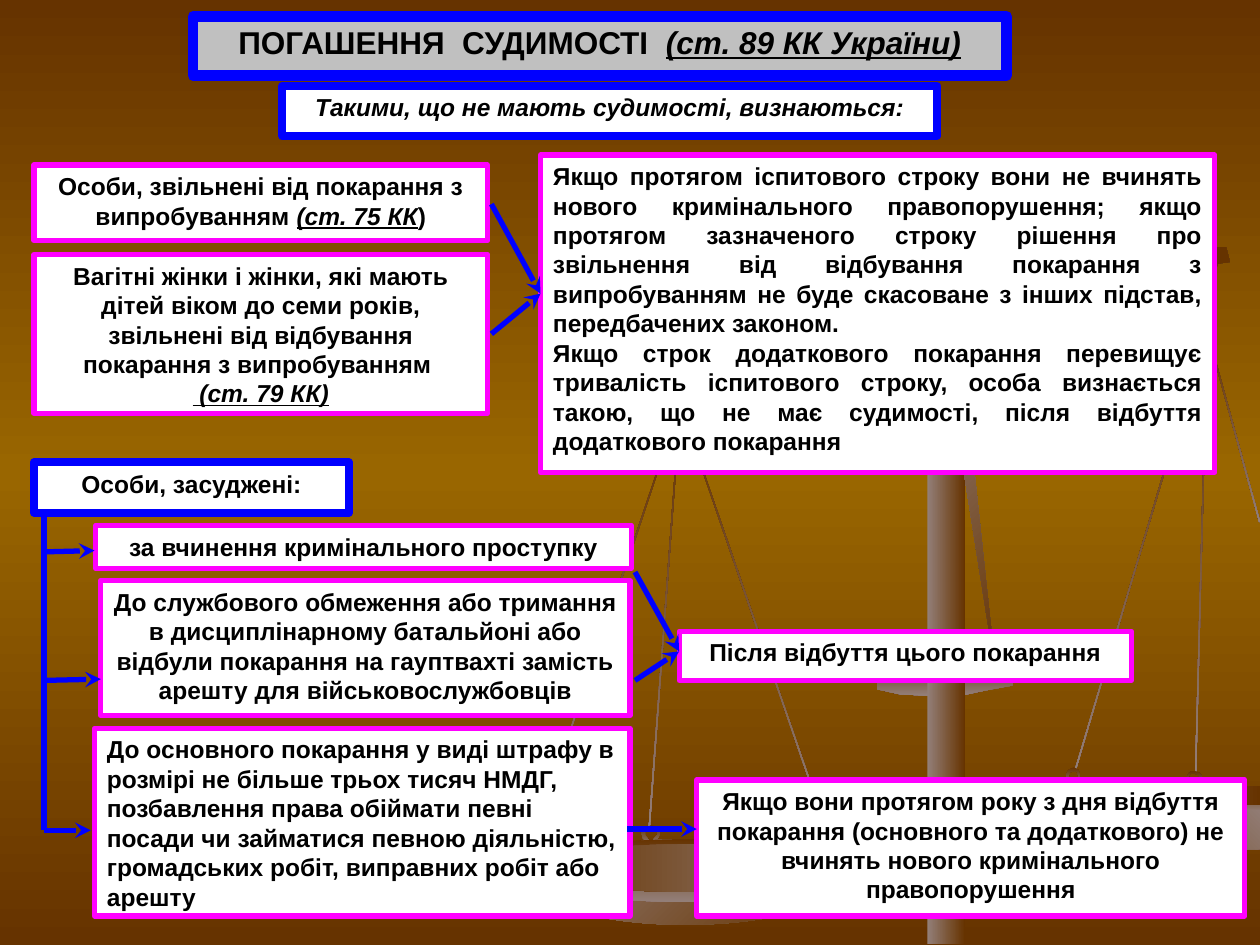
"""Builds a slide on the expiry of a criminal record, over a drawing of scales."""
from copy import deepcopy

from lxml import etree
from pptx import Presentation
from pptx import util as u
from pptx.dml import color
from pptx.enum import shapes, text
from pptx.oxml import ns

COLORS = {"dark": "663300", "gold": "996600", "pale": "937F79", "blue": "0000FF",
          "pink": "FF00FF", "gray": "C0C0C0", "white": "FFFFFF", "black": "000000"}
UNITS_PER_INCH = 100
RISING = ("dark", "pale")
FALLING = ("pale", "dark")
CENTER, JUSTIFY, LEFT = (text.PP_ALIGN.CENTER, text.PP_ALIGN.JUSTIFY, text.PP_ALIGN.LEFT)


def rgb(name):
    return color.RGBColor.from_string(COLORS[name])


class Deck:
    """Holds the style and the current slide."""

    def __init__(self):
        self.presentation = Presentation()
        self.presentation.slide_width = u.Inches(10)
        self.presentation.slide_height = u.Inches(7.5)
        self.slide = self.presentation.slides.add_slide(self.presentation.slide_layouts[5])
        self.font = "Arial"

    def gradient(self, fill, ends, clockwise):
        fill.gradient()
        fill.gradient_angle = (360 - clockwise) % 360
        for stop, name in zip(fill.gradient_stops, ends):
            stop.color.rgb = rgb(name)

    def background(self, edge, middle):
        self.gradient(self.slide.background.fill, (edge, middle), 90)
        stops = next(self.slide.element.iter(ns.qn("a:gsLst")))
        stops[1].set("pos", "50000")
        last = deepcopy(stops[0])
        last.set("pos", "100000")
        stops.append(last)

    def shade(self, part, ends, clockwise):
        part.shadow.inherit = False
        part.line.fill.background()
        self.gradient(part.fill, ends, clockwise)

    def solid(self, kind, place, ends, clockwise, rotation=0):
        part = self.slide.shapes.add_shape(kind, *map(u.Inches, place))
        part.rotation = rotation
        self.shade(part, ends, clockwise)

    def outline(self, contours, ends, clockwise, close=True):
        builder = None
        for start, *rest in contours:
            if builder is None:
                builder = self.slide.shapes.build_freeform(
                    *start, scale=u.Inches(1) / UNITS_PER_INCH)
            else:
                builder.move_to(*start)
            builder.add_line_segments(rest, close=close)
        self.shade(builder.convert_to_shape(), ends, clockwise)

    def fill_text(self, box, paragraphs, align, size, italic):
        frame = box.text_frame
        frame.word_wrap = True
        frame.auto_size = text.MSO_AUTO_SIZE.NONE
        frame.vertical_anchor = text.MSO_ANCHOR.TOP
        for number, parts in enumerate(paragraphs):
            paragraph = frame.add_paragraph() if number else frame.paragraphs[0]
            paragraph.alignment = align
            font = paragraph.font
            font.name, font.size, font.bold, font.italic = self.font, u.Pt(size), True, italic
            font.color.rgb = rgb("black")
            for position, wording in enumerate([parts] if isinstance(parts, str) else parts):
                if wording:
                    run = paragraph.add_run()
                    run.text = wording
                    if position % 2:
                        run.font.italic = run.font.underline = True

    def frame(self, box, fill, border, width):
        box.fill.solid()
        box.fill.fore_color.rgb = rgb(fill)
        box.line.color.rgb = rgb(border)
        box.line.width = u.Pt(width)

    def title(self, place, *paragraphs):
        box = self.slide.shapes.title
        box.left, box.top, box.width, box.height = map(u.Inches, place)
        self.frame(box, "gray", "blue", 6)
        self.fill_text(box, paragraphs, CENTER, 18, False)

    def box(self, place, *paragraphs, border="pink", width=3, align=CENTER, italic=False):
        box = self.slide.shapes.add_shape(shapes.MSO_SHAPE.RECTANGLE, *map(u.Inches, place))
        box.shadow.inherit = False
        self.frame(box, "white", border, width)
        self.fill_text(box, paragraphs, align, 14, italic)

    def heading(self, place, wording, italic=False):
        self.box(place, wording, border="blue", width=4.5, italic=italic)

    def line(self, start, end, arrow=True):
        line = self.slide.shapes.add_connector(
            shapes.MSO_CONNECTOR.STRAIGHT, *map(u.Inches, start + end))
        line.line.color.rgb = rgb("blue")
        line.line.width = u.Pt(3)
        properties = line.element.spPr
        if arrow:
            etree.SubElement(properties.find(ns.qn("a:ln")), ns.qn("a:tailEnd"), type="stealth")
        etree.SubElement(properties, ns.qn("a:effectLst"))

    def scales(self):
        rectangle, oval = shapes.MSO_SHAPE.RECTANGLE, shapes.MSO_SHAPE.OVAL
        for left, top, height, rotation in CORDS:
            self.solid(rectangle, (left, top, 0.01, height), RISING, 90, rotation)
        for contours, ends, clockwise in CASTINGS:
            self.outline(contours, ends, clockwise)
        self.solid(oval, (4.24, 6.66, 2.4, 0.68), FALLING, 45)
        self.solid(oval, (4.16, 6.66, 2.61, 0.5), RISING, 90)
        self.solid(oval, (4.24, 6.7, 2.47, 0.38), RISING, 0)
        self.solid(rectangle, (7.36, 3.08, 0.3, 4.41), FALLING, 0)
        self.outline([POINTER], FALLING, 45, close=False)


CORDS = [(9.04, 2.6, 3.6, 16.6), (9.53, 2.66, 3.47, 1.5), (9.79, 2.64, 1.53, 344.6),
         (5.98, 3.15, 3.53, 341), (4.79, 3.16, 3.68, 18.6), (5.27, 3.25, 3.31, 4.2)]
POINTER = [(791, 539), (750, 280), (750, 276), (748, 268), (760, 265), (761, 274), (763, 277)]
RINGS = [
    [[(849, 626), (853, 623), (856, 619), (857, 615), (856, 611), (852, 609), (848, 611),
      (846, 615), (846, 619), (848, 624)],
     [(853, 612), (855, 613), (856, 617), (855, 618), (850, 623), (848, 617), (849, 613)]],
    [[(958, 251), (962, 248), (965, 244), (965, 239), (962, 235), (958, 234), (955, 235),
      (952, 239), (951, 241), (953, 246)],
     [(959, 236), (962, 237), (963, 241), (962, 244), (958, 249), (954, 244), (954, 239)]],
    [[(951, 264), (955, 268), (960, 268), (964, 265), (965, 260), (964, 255), (959, 249),
      (954, 253), (950, 260)],
     [(953, 260), (956, 254), (958, 251), (963, 256), (964, 260), (961, 264), (957, 265),
      (954, 263)]],
    [[(948, 629), (952, 624), (954, 620), (954, 616), (952, 613), (948, 612), (945, 612),
      (943, 614), (942, 618), (943, 622), (945, 627)],
     [(948, 614), (951, 615), (952, 618), (951, 620), (948, 626), (944, 620), (943, 617),
      (945, 614)]],
    [[(516, 672), (520, 668), (523, 664), (524, 660), (522, 656), (517, 655), (511, 657),
      (509, 661), (510, 665)],
     [(518, 657), (521, 658), (522, 662), (518, 667), (516, 668), (512, 663), (512, 660),
      (515, 657)]],
]
COLLAR = [(697, 528), (724, 531), (739, 531), (757, 530), (778, 528), (802, 524), (804, 544),
          (782, 548), (768, 551), (751, 552), (733, 552), (714, 551), (696, 547)]
PAN_RIM = [(958, 624), (910, 624), (885, 623), (865, 623), (846, 624), (831, 626), (827, 628),
           (830, 632), (842, 636), (863, 639), (894, 642), (935, 644), (958, 645), (1000, 645),
           (1000, 626), (980, 626)]
PAN_BOWL = [(831, 633), (835, 642), (842, 649), (852, 657), (865, 663), (882, 668), (903, 672),
            (928, 674), (957, 675), (1000, 674), (1000, 643), (953, 643), (918, 642),
            (886, 640), (857, 637)]
PAN_INSIDE = [(956, 623), (862, 623), (843, 626), (834, 628), (843, 631), (863, 634),
              (893, 637), (933, 638), (978, 639), (1000, 639), (1000, 624), (979, 624)]
HOOK = [(967, 209), (950, 210), (955, 222), (955, 236), (962, 236), (962, 221)]
BEAM = [(973, 196), (976, 208), (525, 273), (524, 264), (737, 212), (759, 209)]
CASTINGS = [([COLLAR], RISING, 90), ([PAN_RIM], RISING, 90), ([PAN_BOWL], RISING, 315),
            ([PAN_INSIDE], FALLING, 0), ([HOOK], RISING, 90), ([BEAM], FALLING, 0),
            *((ring, RISING, 90) for ring in RINGS)]


def main():
    deck = Deck()
    deck.background("dark", "gold")
    deck.scales()
    deck.title((1.53, 0.13, 6.46, 0.47), ("ПОГАШЕННЯ  СУДИМОСТІ  ", "(ст. 89 КК України)"))
    deck.heading((2.24, 0.68, 5.2, 0.4), "Такими, що не мають судимості, визнаються:", italic=True)
    deck.box((0.27, 1.31, 3.6, 0.6),
             ("Особи, звільнені від покарання з випробуванням ", "(ст. 75 КК", ")"))
    deck.box((0.27, 2.02, 3.6, 1.26),
             "Вагітні жінки і жінки, які мають дітей віком до семи років, звільнені від "
             "відбування покарання з випробуванням ", ("", " (ст. 79 КК)"))
    deck.box((4.29, 1.23, 5.35, 2.52),
             "Якщо протягом іспитового строку вони не вчинять нового кримінального "
             "правопорушення; якщо протягом зазначеного строку рішення про звільнення від "
             "відбування покарання з випробуванням не буде скасоване з інших підстав, "
             "передбачених законом.",
             "Якщо строк додаткового покарання перевищує тривалість іспитового строку, особа "
             "визнається такою, що не має судимості, після відбуття додаткового покарання",
             align=JUSTIFY)
    deck.heading((0.27, 3.67, 2.5, 0.4), "Особи, засуджені:")
    deck.box((0.76, 4.17, 4.25, 0.34), "за вчинення кримінального проступку")
    deck.box((0.8, 4.61, 4.2, 1.07),
             "До службового обмеження або тримання в дисциплінарному батальйоні або відбули "
             "покарання на гауптвахті замість арешту для військовослужбовців")
    deck.box((0.75, 5.78, 4.25, 1.49),
             "До основного покарання у виді штрафу в розмірі не більше трьох тисяч НМДГ, "
             "позбавлення права обіймати певні посади чи займатися певною діяльністю, "
             "громадських робіт, виправних робіт або арешту", align=LEFT)
    deck.box((5.39, 5.01, 3.59, 0.39), "Після відбуття цього покарання")
    deck.box((5.53, 6.19, 4.35, 1.08),
             "Якщо вони протягом року з дня відбуття покарання (основного та додаткового) не "
             "вчинять нового кримінального правопорушення")
    for left, tops, target in ((3.9, (1.62, 2.65), (4.29, 2.33)),
                               (5.04, (4.54, 5.4), (5.39, 5.17)), (4.98, (6.58,), (5.53, 6.58))):
        for top in tops:
            deck.line((left, top), target)
    trunk = 0.35
    deck.line((trunk, 4.07), (trunk, 6.59), arrow=False)
    for top, target in ((4.38, (0.75, 4.37)), (5.4, (0.8, 5.39)), (6.59, (0.72, 6.59))):
        deck.line((trunk, top), target)
    deck.presentation.save("out.pptx")


if __name__ == "__main__":
    main()
